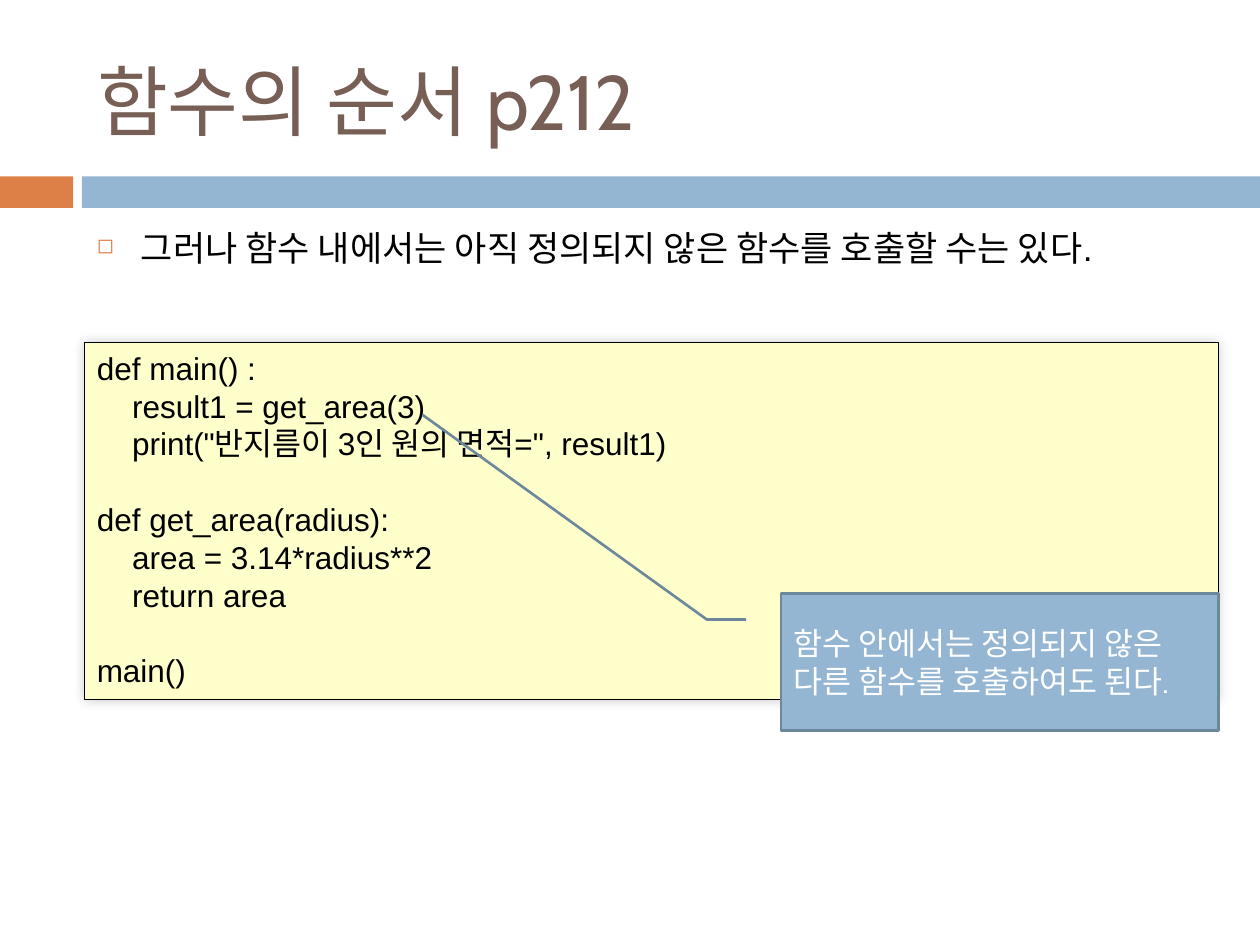
"""Build a slide on the order of function definitions in Python."""
from lxml.etree import SubElement
from pptx import Presentation
from pptx.dml.color import RGBColor
from pptx.enum.shapes import MSO_SHAPE
from pptx.enum.text import MSO_ANCHOR, PP_ALIGN
from pptx.oxml import parse_xml
from pptx.oxml.ns import nsdecls, qn
from pptx.util import Inches, Pt

ORANGE = RGBColor(0xDD, 0x80, 0x47)
BLUE = RGBColor(0x94, 0xB6, 0xD2)
DARK_BLUE = RGBColor(0x6D, 0x87, 0x9B)
BROWN = RGBColor(0x77, 0x5F, 0x55)
CREAM = RGBColor(0xFF, 0xFF, 0xCC)
BLACK = RGBColor(0, 0, 0)
WHITE = RGBColor(0xFF, 0xFF, 0xFF)

CODE = [
    (0, 0, "def main() :"),
    (1, 0, "result1 = get_area(3)"),
    (1, 0, 'print("반지름이 3인 원의 면적=", result1)'),
    (0, 1, "def get_area(radius):"),
    (1, 0, "area = 3.14*radius**2"),
    (1, 0, "return area"),
    (0, 1, "main()"),
]


def add_block(kind, left, top, width, height, fill):
    block = slide.shapes.add_shape(
        kind, Inches(left), Inches(top), Inches(width), Inches(height))
    block.shadow.inherit = False
    block.fill.solid()
    block.fill.fore_color.rgb = fill
    block.line.fill.background()
    return block


def style(paragraph, font_name, size, color):
    paragraph.alignment = PP_ALIGN.LEFT
    paragraph.font.name = font_name
    paragraph.font.size = Pt(size)
    paragraph.font.color.rgb = color


prs = Presentation()
prs.slide_width, prs.slide_height = Inches(10), Inches(7.5)
slide = prs.slides.add_slide(prs.slide_layouts[5])

add_block(MSO_SHAPE.RECTANGLE, 0, 1.4, 0.58, 0.25, ORANGE)
add_block(MSO_SHAPE.RECTANGLE, 0.65, 1.4, 9.35, 0.25, BLUE)

title = slide.shapes.title
title.left, title.top = Inches(0.67), Inches(0.25)
title.width, title.height = Inches(8.92), Inches(1.08)
title.text_frame.text = "함수의 순서 p212"
title.text_frame.vertical_anchor = MSO_ANCHOR.MIDDLE
style(title.text_frame.paragraphs[0], "Cabin", 44, BROWN)

statement = slide.shapes.add_textbox(
    Inches(0.67), Inches(1.75), Inches(8.92), Inches(4.92)).text_frame
statement.word_wrap = True
statement.text = "그러나 함수 내에서는 아직 정의되지 않은 함수를 호출할 수는 있다."
point = statement.paragraphs[0]
style(point, "Arial", 20, BLACK)
point.space_before = Pt(7)
point_format = point._p.get_or_add_pPr()
point_format.set("marL", str(Inches(0.35)))
point_format.set("indent", str(Inches(-0.35)))
bullet_markup = (
    f'<a:buClr {nsdecls("a")}><a:srgbClr val="{ORANGE}"/></a:buClr>',
    f'<a:buSzPct {nsdecls("a")} val="60000"/>',
    f'<a:buChar {nsdecls("a")} char="◻"/>',
)
default_run = point_format.find(qn("a:defRPr"))
for markup in bullet_markup:
    default_run.addprevious(parse_xml(markup))

code_box = add_block(MSO_SHAPE.RECTANGLE, 0.67, 2.72, 9, 2.83, CREAM)
code_box.line.color.rgb = BLACK
code_box.line.width = Pt(0.75)
glow = SubElement(code_box._element.spPr.find(qn("a:effectLst")), qn("a:outerShdw"),
                  blurRad=str(Pt(6)), dist="0", dir="18900000", rotWithShape="0")
glow_color = SubElement(glow, qn("a:srgbClr"), val=str(BLACK))
SubElement(glow_color, qn("a:alpha"), val="20000")

listing = code_box.text_frame
listing.vertical_anchor = MSO_ANCHOR.TOP
listing.text = "\n".join(text for _, _, text in CODE)
for line, (level, gap, _) in zip(listing.paragraphs, CODE):
    style(line, "Arial", 18, BLACK)
    line.space_before = Pt(21.6 * gap)
    line._p.get_or_add_pPr().set("marL", str(Inches(0.28 * level)))

callout = add_block(MSO_SHAPE.LINE_CALLOUT_2, 6.2, 4.71, 3.47, 1.09, BLUE)
callout.line.color.rgb = DARK_BLUE
callout.line.width = Pt(1.5)
for index, value in enumerate((0.19, -0.08, 0.19, -0.17, -1.3, -0.82)):
    callout.adjustments[index] = value
callout.text_frame.text = "함수 안에서는 정의되지 않은 다른 함수를 호출하여도 된다."
callout.text_frame.vertical_anchor = MSO_ANCHOR.MIDDLE
style(callout.text_frame.paragraphs[0], "Cabin", 18, WHITE)

prs.save("out.pptx")
